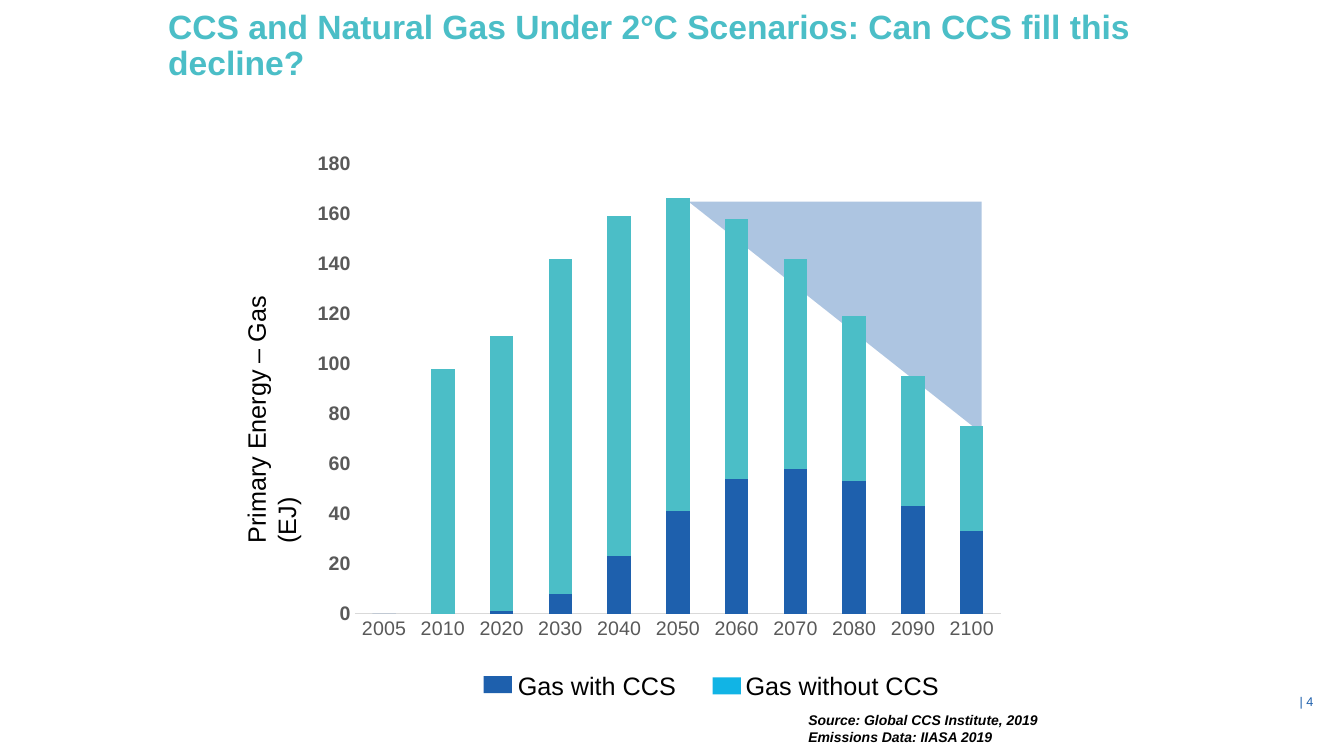
from lxml.etree import SubElement
from pptx import Presentation
from pptx.chart.data import CategoryChartData
from pptx.dml.color import RGBColor
from pptx.enum.chart import XL_CHART_TYPE, XL_TICK_MARK
from pptx.enum.shapes import MSO_SHAPE
from pptx.enum.text import MSO_ANCHOR, PP_ALIGN
from pptx.oxml import parse_xml
from pptx.oxml.ns import nsdecls, qn
from pptx.util import Cm, Pt

BLUE = RGBColor(0x1E, 0x60, 0xAD)
TEAL = RGBColor(0x4B, 0xBE, 0xC7)
CYAN = RGBColor(0x11, 0xB4, 0xE5)
BLACK = RGBColor(0, 0, 0)
GREY = RGBColor(0x59, 0x59, 0x59)
LIGHT_GREY = RGBColor(0xD9, 0xD9, 0xD9)

YEARS = ["2005"] + [str(year) for year in range(2010, 2101, 10)]
WITH_CCS = [0, 0, 1, 8, 23, 41, 54, 58, 53, 43, 33]
WITHOUT_CCS = [None, 98, 110, 134, 136, 125, 104, 84, 66, 52, 42]
PLOT_AREA = {"x": 0.091, "y": 0.038, "w": 0.898, "h": 0.88}


class SlideBuilder:
    font_name = "Arial"

    def __init__(self, slide):
        self.shapes = slide.shapes

    def style_font(self, font, size, color, bold=False, italic=False):
        font.name = self.font_name
        font.size = Pt(size)
        font.color.rgb = color
        font.bold = bold
        font.italic = italic

    def text(self, content, left, top, width, height, size=18, color=BLACK,
             bold=False, italic=False, wrap=True, align=PP_ALIGN.LEFT,
             anchor=MSO_ANCHOR.TOP, line_spacing=None, rotation=0):
        box = self.shapes.add_textbox(Cm(left), Cm(top), Cm(width), Cm(height))
        box.rotation = rotation
        frame = box.text_frame
        frame.word_wrap = wrap
        frame.vertical_anchor = anchor
        frame.text = content
        for para in frame.paragraphs:
            para.alignment = align
            para.line_spacing = line_spacing
            for span in para.runs:
                self.style_font(span.font, size, color, bold, italic)

    def paint(self, shape, color):
        shape.shadow.inherit = False
        shape.fill.solid()
        shape.fill.fore_color.rgb = color
        shape.line.fill.background()

    def swatch(self, left, top, color):
        shape = self.shapes.add_shape(
            MSO_SHAPE.RECTANGLE, Cm(left), Cm(top), Cm(0.71), Cm(0.43))
        self.paint(shape, color)

    def polygon(self, points, color, opacity):
        corners = [(Cm(x), Cm(y)) for x, y in points]
        builder = self.shapes.build_freeform(*corners[0])
        builder.add_line_segments(corners[1:], close=True)
        shape = builder.convert_to_shape()
        self.paint(shape, color)
        color_element = shape.element.spPr.find(".//" + qn("a:srgbClr"))
        SubElement(color_element, qn("a:alpha"), val=str(opacity * 1000))

    def stacked_chart(self, categories, series, left, top, width, height):
        data = CategoryChartData()
        data.categories = categories
        for name, values, _ in series:
            data.add_series(name, values)
        chart = self.shapes.add_chart(
            XL_CHART_TYPE.COLUMN_STACKED,
            Cm(left), Cm(top), Cm(width), Cm(height), data).chart
        chart.has_legend = False
        chart.has_title = False
        self.style_font(chart.font, 10, BLACK)
        plot = chart.plots[0]
        plot.gap_width = 150
        plot.overlap = 100
        plot.vary_by_categories = False
        for bars, (_, _, color) in zip(plot.series, series):
            bars.format.fill.solid()
            bars.format.fill.fore_color.rgb = color
        for axis in (chart.category_axis, chart.value_axis):
            axis.major_tick_mark = XL_TICK_MARK.NONE
            axis.minor_tick_mark = XL_TICK_MARK.NONE
            axis.has_major_gridlines = False
            self.style_font(axis.tick_labels.font, 14, GREY,
                            bold=axis is chart.value_axis)
        chart.category_axis.format.line.color.rgb = LIGHT_GREY
        chart.category_axis.format.line.width = Pt(0.75)
        scale = chart.value_axis
        scale.tick_labels.font.bold = True
        scale.format.line.fill.background()
        scale.minimum_scale = 0
        scale.maximum_scale = 180
        scale.major_unit = 20
        self.place_plot(chart)

    def place_plot(self, chart):
        area = chart.element.find(".//" + qn("c:plotArea"))
        for layout in area.findall(qn("c:layout")):
            area.remove(layout)
        sizes = "".join(f'<c:{key} val="{value}"/>'
                        for key, value in PLOT_AREA.items())
        area.insert(0, parse_xml(
            f'<c:layout {nsdecls("c")}><c:manualLayout>'
            '<c:layoutTarget val="inner"/>'
            '<c:xMode val="edge"/><c:yMode val="edge"/>'
            f'{sizes}</c:manualLayout></c:layout>'))


def main():
    deck = Presentation()
    deck.slide_width = Cm(33.87)
    deck.slide_height = Cm(19.05)
    page = SlideBuilder(deck.slides.add_slide(deck.slide_layouts[6]))

    page.polygon([(17.35, 5.08), (24.74, 10.92), (24.74, 5.08)], BLUE, 36)
    page.text("| 4", 25.73, 17.17, 7.62, 1.02, size=9, color=BLUE,
              align=PP_ALIGN.RIGHT, anchor=MSO_ANCHOR.MIDDLE)
    page.text("CCS and Natural Gas Under 2°C Scenarios: "
              "Can CCS fill this decline?", 3.99, 0.13, 27.97, 1.47,
              size=24, color=TEAL, bold=True, line_spacing=0.9)
    page.stacked_chart(
        YEARS,
        [("Gas with CCS", WITH_CCS, BLUE),
         ("Gas without CCS", WITHOUT_CCS, TEAL)],
        7.29, 3.63, 18.14, 12.9)
    page.text("Primary Energy – Gas (EJ)", 2.59, 9.58, 7.72, 1.02,
              rotation=270)
    for label, left, width, swatch_left, swatch_top, color in (
            ("Gas with CCS", 12.8, 4.55, 12.19, 17.04, BLUE),
            ("Gas without CCS", 18.54, 5.44, 17.96, 17.07, CYAN)):
        page.text(label, left, 16.76, width, 1.02, wrap=False)
        page.swatch(swatch_left, swatch_top, color)
    page.text("Source: Global CCS Institute, 2019\nEmissions Data: IIASA 2019",
              20.12, 17.81, 6.35, 1.12, size=10, bold=True, italic=True,
              wrap=False)

    deck.save("out.pptx")


if __name__ == "__main__":
    main()
